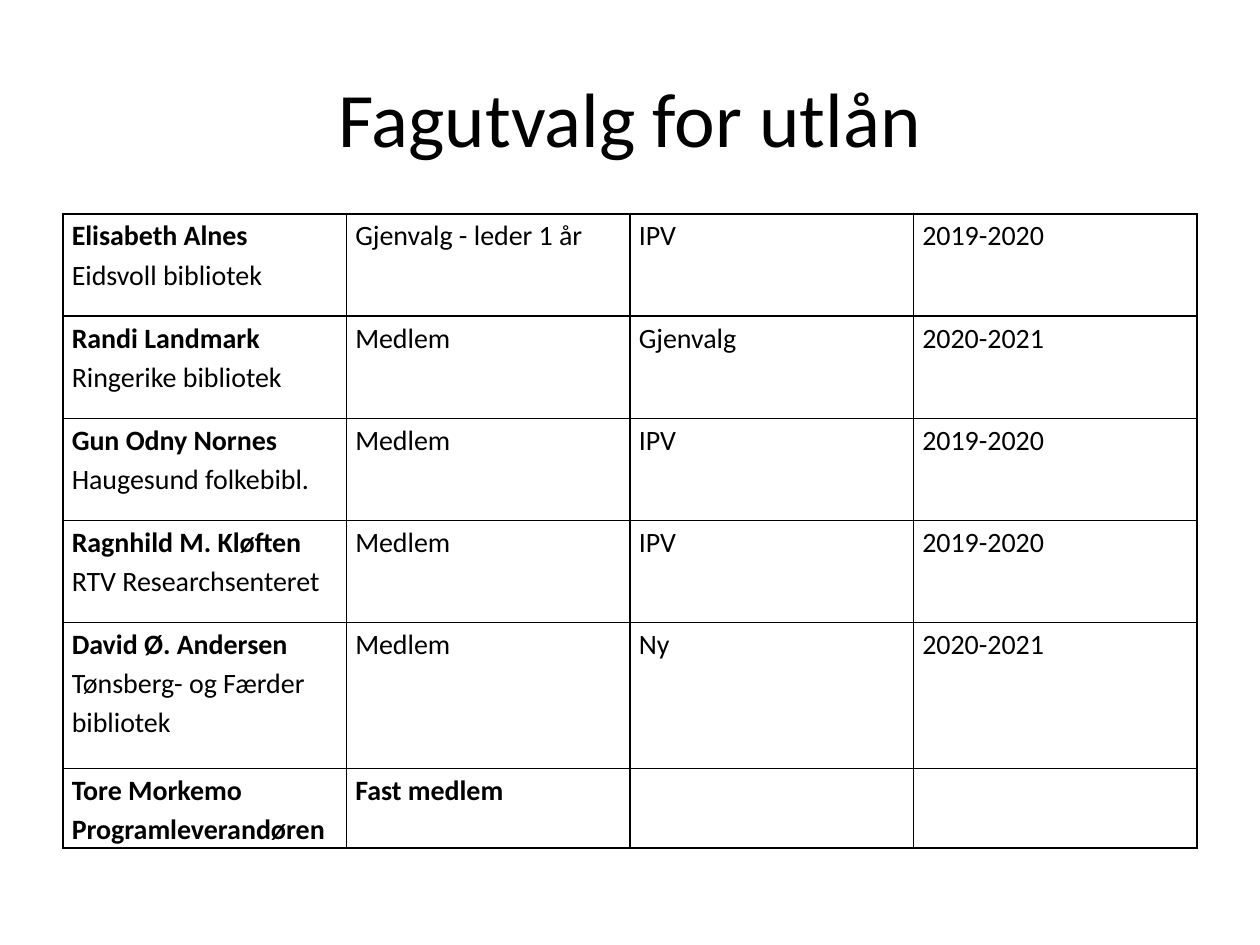
from lxml.etree import SubElement
from pptx import Presentation
from pptx.dml.color import RGBColor
from pptx.enum.text import MSO_ANCHOR, PP_ALIGN
from pptx.oxml.ns import qn
from pptx.util import Inches, Pt

COLORS = {"text": "000000", "border": "000000"}

# Each row: person, workplace, role, election, period
MEMBERS = [
    ("Elisabeth Alnes", "Eidsvoll bibliotek", "Gjenvalg - leder 1 år", "IPV", "2019-2020"),
    ("Randi Landmark", "Ringerike bibliotek", "Medlem", "Gjenvalg", "2020-2021"),
    ("Gun Odny Nornes", "Haugesund folkebibl.", "Medlem", "IPV", "2019-2020"),
    ("Ragnhild M. Kløften", "RTV Researchsenteret", "Medlem", "IPV", "2019-2020"),
    ("David Ø. Andersen", "Tønsberg- og Færder bibliotek", "Medlem", "Ny", "2020-2021"),
    ("Tore Morkemo", "Programleverandøren", "Fast medlem", "", ""),
]
ROW_HEIGHTS = [0.81] * 4 + [1.16, 0.63]


class SlideBuilder:
    """Holds the style and the current slide."""

    font_name = "Calibri"

    def __init__(self, page):
        self.page = page

    def style(self, paragraph, size, bold=False):
        font = paragraph.font
        font.name = self.font_name
        font.size = Pt(size)
        font.bold = bold
        font.color.rgb = RGBColor.from_string(COLORS["text"])

    def title(self, text, left, top, width, height):
        box = self.page.shapes.add_textbox(
            Inches(left), Inches(top), Inches(width), Inches(height))
        frame = box.text_frame
        frame.word_wrap = True
        frame.vertical_anchor = MSO_ANCHOR.MIDDLE
        paragraph = frame.paragraphs[0]
        paragraph.text = text
        paragraph.alignment = PP_ALIGN.CENTER
        self.style(paragraph, 44)

    def border(self, cell):
        properties = cell._tc.get_or_add_tcPr()
        for position, side in enumerate(("a:lnL", "a:lnR", "a:lnT", "a:lnB")):
            line = SubElement(properties, qn(side), w=str(Pt(1)))
            fill = SubElement(line, qn("a:solidFill"))
            SubElement(fill, qn("a:srgbClr"), val=COLORS["border"])
            properties.insert(position, line)

    def cell(self, cell, lines):
        """Fill a cell with (text, bold) lines."""
        cell.fill.background()
        self.border(cell)
        cell.margin_left = cell.margin_right = Inches(0.07)
        cell.margin_top = cell.margin_bottom = 0
        frame = cell.text_frame
        for number, (text, bold) in enumerate(lines):
            paragraph = frame.add_paragraph() if number else frame.paragraphs[0]
            paragraph.text = text
            paragraph.line_spacing = 1.15
            self.style(paragraph, 16, bold)

    def table(self, rows, heights, left, top, width):
        table = self.page.shapes.add_table(
            len(rows), len(rows[0]), Inches(left), Inches(top),
            Inches(width), Inches(sum(heights))).table
        table.first_row = table.horz_banding = False
        for row, height, contents in zip(table.rows, heights, rows):
            row.height = Inches(height)
            for cell, lines in zip(row.cells, contents):
                self.cell(cell, lines)


def main():
    deck = Presentation()
    deck.slide_width, deck.slide_height = Inches(10), Inches(7.5)
    builder = SlideBuilder(deck.slides.add_slide(deck.slide_layouts[6]))

    # Heading
    builder.title("Fagutvalg for utlån", 0.5, 0.3, 9, 1.25)

    # Members; the permanent member in the last row is all bold
    rows = []
    for member in MEMBERS:
        name, workplace, *details = member
        permanent = member is MEMBERS[-1]
        rows.append([[(name, True), (workplace, permanent)]]
                    + [[(detail, permanent)] for detail in details])
    builder.table(rows, ROW_HEIGHTS, 0.5, 1.7, 9)

    deck.save("out.pptx")


if __name__ == "__main__":
    main()
